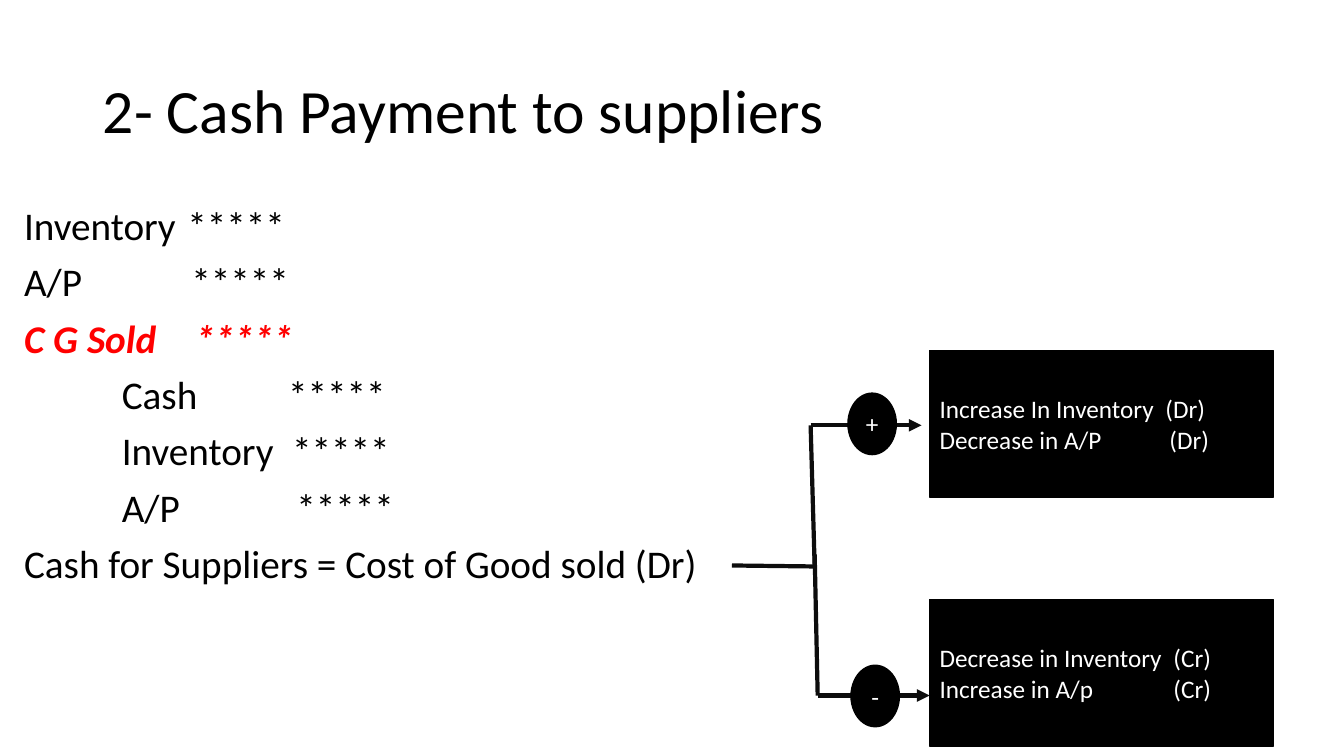
import pptx
import pptx.dml.color
import pptx.enum.shapes
import pptx.enum.text
import pptx.oxml
import pptx.oxml.ns
import pptx.util
from dataclasses import dataclass

Inches = pptx.util.Inches
Pt = pptx.util.Pt
RGBColor = pptx.dml.color.RGBColor
PP_ALIGN = pptx.enum.text.PP_ALIGN
MSO_ANCHOR = pptx.enum.text.MSO_ANCHOR
MSO_SHAPE = pptx.enum.shapes.MSO_SHAPE


@dataclass
class Theme:
    font = "Calibri"
    black = RGBColor(0, 0, 0)
    white = RGBColor(255, 255, 255)
    red = RGBColor(255, 0, 0)
    line = RGBColor(13, 13, 13)
    title = Pt(44)
    body = Pt(28)
    label = Pt(18)


theme = Theme()


def write(paragraph, text, size, color, tabs=(), alignment=PP_ALIGN.LEFT):
    paragraph.alignment = alignment
    run = paragraph.add_run()
    run.text = text
    run.font.name = theme.font
    run.font.size = size
    run.font.color.rgb = color
    if tabs:
        properties = paragraph._p.get_or_add_pPr()
        tab_list = pptx.oxml.ns.qn("a:tabLst")
        tab_list = properties.makeelement(tab_list, {})
        properties.append(tab_list)
        for position in tabs:
            tab = tab_list.makeelement(
                pptx.oxml.ns.qn("a:tab"), {"pos": str(Inches(position)), "algn": "l"}
            )
            tab_list.append(tab)
    return run


def add_black_shape(kind, left, top, width, height):
    shape = slide.shapes.add_shape(
        kind, Inches(left), Inches(top), Inches(width), Inches(height)
    )
    shape.shadow.inherit = False
    shape.fill.solid()
    shape.fill.fore_color.rgb = theme.black
    shape.line.color.rgb = theme.black
    shape.line.width = Pt(1)
    shape.text_frame.vertical_anchor = MSO_ANCHOR.MIDDLE
    return shape


presentation = pptx.Presentation()
presentation.slide_width = Inches(13.33)
presentation.slide_height = Inches(7.5)
slide = presentation.slides.add_slide(presentation.slide_layouts[5])

title = slide.shapes.title
title.left, title.top = Inches(0.92), Inches(0.4)
title.width, title.height = Inches(11.5), Inches(1.45)
title.text_frame.auto_size = pptx.enum.text.MSO_AUTO_SIZE.NONE
title.text_frame.vertical_anchor = MSO_ANCHOR.MIDDLE
title_paragraph = title.text_frame.paragraphs[0]
title_paragraph.line_spacing = 0.9
write(title_paragraph, "2- Cash Payment to suppliers", theme.title, theme.black)

entries = [
    ("Inventory\t*****", (1.62,)),
    ("A/P\t*****", (1.66,)),
    ("C G Sold\t*****", (1.7,)),
    ("\tCash\t*****", (0.97, 2.62)),
    ("\tInventory\t*****", (0.97, 2.66)),
    ("\tA/P\t*****", (0.97, 2.7)),
    ("Cash for Suppliers = Cost of Good sold (Dr)", ()),
]
journal = slide.shapes.add_textbox(Inches(0.14), Inches(2), Inches(13.19), Inches(5.5))
journal.text_frame.word_wrap = True
for index, (text, tabs) in enumerate(entries):
    frame = journal.text_frame
    paragraph = frame.add_paragraph() if index else frame.paragraphs[0]
    paragraph.line_spacing = 0.9
    paragraph.space_before = Pt(10)
    highlighted = text.startswith("C G Sold")
    color = theme.red if highlighted else theme.black
    run = write(paragraph, text, theme.body, color, tabs)
    run.font.bold = run.font.italic = highlighted

branches = [
    ((7.26, 5.61), (8.08, 5.62), False),
    ((8.08, 5.62), (8.04, 4.22), False),
    ((8.11, 6.9), (8.08, 5.5), False),
    ((8.04, 4.22), (9.14, 4.22), True),
    ((8.11, 6.9), (9.22, 6.9), True),
]
for start, end, has_arrow in branches:
    connector = slide.shapes.add_connector(
        pptx.enum.shapes.MSO_CONNECTOR.STRAIGHT,
        *[Inches(value) for value in start + end],
    )
    connector.line.color.rgb = theme.line
    connector.line.width = Pt(3)
    if has_arrow:
        line = connector.line._get_or_add_ln()
        line.append(line.makeelement(pptx.oxml.ns.qn("a:tailEnd"), {"type": "triangle"}))
    properties = connector._element.spPr
    properties.append(properties.makeelement(pptx.oxml.ns.qn("a:effectLst"), {}))

boxes = [
    (3.48, [("Increase In Inventory\t(Dr)", 2.24), ("Decrease in A/P\t(Dr)", 2.28)]),
    (5.95, [("Decrease in Inventory\t(Cr)", 2.32), ("Increase in A/p\t(Cr)", 2.32)]),
]
for top, adjustments in boxes:
    box = add_black_shape(MSO_SHAPE.RECTANGLE, 9.22, top, 3.41, 1.45)
    for index, (text, tab) in enumerate(adjustments):
        frame = box.text_frame
        paragraph = frame.add_paragraph() if index else frame.paragraphs[0]
        write(paragraph, text, theme.label, theme.white, (tab,))

for sign, left, top in [("+", 8.41, 3.9), ("-", 8.44, 6.6)]:
    circle = add_black_shape(MSO_SHAPE.OVAL, left, top, 0.48, 0.61)
    write(
        circle.text_frame.paragraphs[0], sign, theme.label, theme.white,
        alignment=PP_ALIGN.CENTER,
    )

presentation.save("out.pptx")
